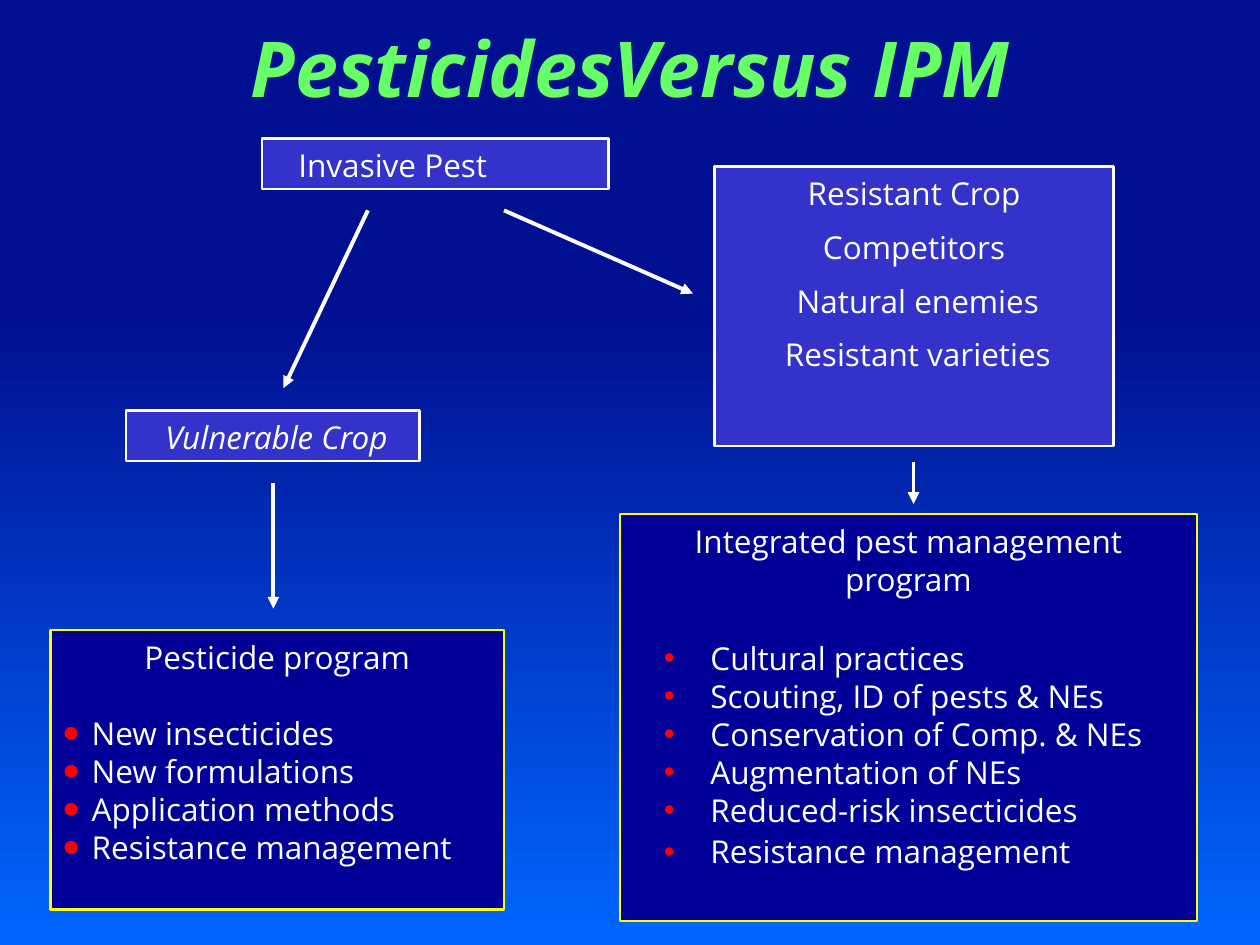
from dataclasses import dataclass

from lxml.etree import SubElement
from pptx import Presentation
from pptx.dml.color import RGBColor
from pptx.enum.shapes import MSO_CONNECTOR, MSO_SHAPE
from pptx.enum.text import MSO_ANCHOR, PP_ALIGN
from pptx.oxml.ns import qn
from pptx.slide import Slide
from pptx.util import Inches, Pt

NAVY = RGBColor(0x01, 0x0F, 0x91)
SKY = RGBColor(0x00, 0x66, 0xFF)
INDIGO = RGBColor(0x33, 0x33, 0xCC)
DEEP_BLUE = RGBColor(0x00, 0x00, 0x99)
WHITE = RGBColor(0xFF, 0xFF, 0xFF)
YELLOW = RGBColor(0xFF, 0xFF, 0x00)
GREEN = RGBColor(0x66, 0xFF, 0x66)
RED = RGBColor(0xFF, 0x00, 0x00)


@dataclass
class Diagram:
    slide: Slide
    font: str = "Open Sans"
    size: float = 18
    leading: float = 1.205

    def background(self, top, bottom, start):
        fill = self.slide.background.fill
        fill.gradient()
        fill.gradient_angle = 270
        for stop, color, position in zip(fill.gradient_stops, (top, bottom), (start, 1)):
            stop.color.rgb = color
            stop.position = position

    def label(self, paragraph, text, color=WHITE, size=None, align=PP_ALIGN.CENTER,
              before=0, indent=0, bold=False, italic=False):
        size = size or self.size
        paragraph.text = text
        paragraph.alignment = align
        paragraph.line_spacing = Pt(round(size * self.leading, 1))
        if before:
            paragraph.space_before = Pt(before)
        if indent:
            paragraph._p.get_or_add_pPr().set("marL", str(Inches(indent)))
        font = paragraph.font
        font.name, font.size, font.color.rgb = self.font, Pt(size), color
        font.bold, font.italic = bold, italic

    def title(self, text, left, top, width, height):
        frame = self.slide.shapes.add_textbox(
            Inches(left), Inches(top), Inches(width), Inches(height)).text_frame
        frame.word_wrap = True
        frame.margin_top = Inches(0.1)
        self.label(frame.paragraphs[0], text, GREEN, 44, bold=True, italic=True)

    def box(self, left, top, width, height, fill, outline):
        panel = self.slide.shapes.add_shape(
            MSO_SHAPE.RECTANGLE, Inches(left), Inches(top), Inches(width), Inches(height))
        panel.shadow.inherit = False
        panel.fill.solid()
        panel.fill.fore_color.rgb = fill
        panel.line.color.rgb = outline
        panel.line.width = Pt(1.5)
        frame = panel.text_frame
        frame.word_wrap = True
        frame.vertical_anchor = MSO_ANCHOR.TOP
        frame.margin_top = Inches(0.06)
        return frame

    def bullets(self, frame, items, gap, start, hang, scale=100, last_gap=0):
        gaps = [gap] + [0] * (len(items) - 2) + [last_gap]
        for item, before in zip(items, gaps):
            paragraph = frame.add_paragraph()
            properties = paragraph._p.get_or_add_pPr()
            properties.set("indent", str(-Inches(hang)))
            color = SubElement(properties, qn("a:buClr"))
            SubElement(color, qn("a:srgbClr")).set("val", str(RED))
            SubElement(properties, qn("a:buSzPct")).set("val", str(scale * 1000))
            SubElement(properties, qn("a:buFont")).set("typeface", "Arial")
            SubElement(properties, qn("a:buChar")).set("char", "•")
            self.label(paragraph, item, align=PP_ALIGN.LEFT,
                       before=before, indent=start + hang)

    def arrow(self, x1, y1, x2, y2):
        connector = self.slide.shapes.add_connector(
            MSO_CONNECTOR.STRAIGHT, Inches(x1), Inches(y1), Inches(x2), Inches(y2))
        connector.line.color.rgb = WHITE
        connector.line.width = Pt(2.25)
        SubElement(connector.line._get_or_add_ln(), qn("a:tailEnd")).set("type", "triangle")
        SubElement(connector._element.spPr, qn("a:effectLst"))


def main():
    presentation = Presentation()
    presentation.slide_width = Inches(10)
    presentation.slide_height = Inches(7.5)
    diagram = Diagram(presentation.slides.add_slide(presentation.slide_layouts[6]))
    diagram.background(NAVY, SKY, 0.33)

    resistant = diagram.box(5.67, 1.32, 3.17, 2.22, INDIGO, WHITE)
    diagram.label(resistant.paragraphs[0], "Resistant Crop")
    for defence, indent in (("Competitors", 0), ("Natural enemies", 0.06),
                            ("Resistant varieties", 0.06)):
        diagram.label(resistant.add_paragraph(), defence, before=9, indent=indent)

    vulnerable = diagram.box(1, 3.26, 2.33, 0.4, INDIGO, WHITE)
    diagram.label(vulnerable.paragraphs[0], "Vulnerable Crop", indent=0.06, italic=True)

    invasive = diagram.box(2.08, 1.1, 2.75, 0.4, INDIGO, WHITE)
    diagram.label(invasive.paragraphs[0], "Invasive Pest", align=PP_ALIGN.LEFT, indent=0.19)

    for ends in ((2.92, 1.67, 2.25, 3.08), (4, 1.67, 5.5, 2.33),
                 (2.17, 3.83, 2.17, 4.83), (7.25, 3.67, 7.25, 4)):
        diagram.arrow(*ends)

    integrated = diagram.box(4.92, 4.08, 4.58, 3.23, DEEP_BLUE, YELLOW)
    diagram.label(integrated.paragraphs[0], "Integrated pest management program")
    diagram.bullets(integrated, (
        "Cultural practices", "Scouting, ID of pests & NEs", "Conservation of Comp. & NEs",
        "Augmentation of NEs", "Reduced-risk insecticides", "Resistance management",
    ), gap=23.5, start=0.25, hang=0.37, last_gap=2)

    pesticide = diagram.box(0.4, 5, 3.6, 2.22, DEEP_BLUE, YELLOW)
    diagram.label(pesticide.paragraphs[0], "Pesticide program")
    diagram.bullets(pesticide, (
        "New insecticides", "New formulations", "Application methods", "Resistance management",
    ), gap=21.7, start=0, hang=0.23, scale=150)

    diagram.title("PesticidesVersus IPM", 0.17, 0.06, 9.67, 0.84)
    presentation.save("out.pptx")


if __name__ == "__main__":
    main()
